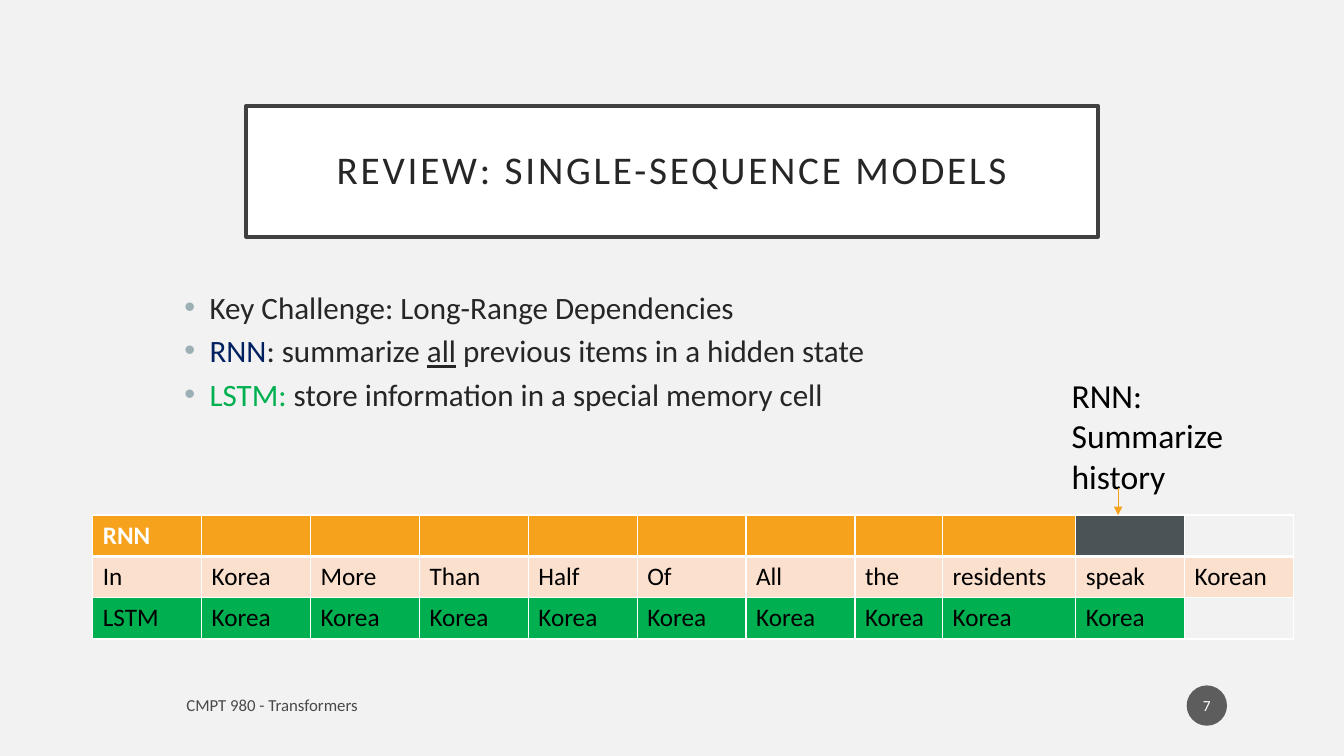
from pptx import Presentation
from pptx.dml.color import RGBColor
from pptx.enum import shapes, text
from pptx.oxml import parse_xml
from pptx.oxml.ns import nsdecls, qn
from pptx.util import Inches, Pt

COLORS = {
    "page": "F2F2F2", "white": "FFFFFF", "black": "000000", "frame": "404040",
    "body": "262626", "bullet": "9BAFB5", "navy": "002060", "green": "00B050",
    "orange": "F6A21D", "slate": "4A5356", "peach": "FBE0CD",
    "footer": "494949", "badge": "5D5D5D",
}


def rgb(name):
    return RGBColor.from_string(COLORS[name])


def write(para, words, size=18, color="black", bold=False, underline=False, spacing=None):
    span = para.add_run()
    span.text = words
    font = span.font
    font.name, font.size, font.bold, font.underline = "Calibri", Pt(size), bold, underline
    font.color.rgb = rgb(color)
    if spacing:
        span._r.get_or_add_rPr().set("spc", str(spacing * 100))


deck = Presentation()
deck.slide_width, deck.slide_height = Inches(13.33), Inches(7.5)
page = deck.slides.add_slide(deck.slide_layouts[6])
page.background.fill.solid()
page.background.fill.fore_color.rgb = rgb("page")

# Framed title
title = page.shapes.add_shape(shapes.MSO_SHAPE.RECTANGLE, Inches(2.44), Inches(1.05),
                              Inches(8.45), Inches(1.3))
title.shadow.inherit = False
title.fill.solid()
title.fill.fore_color.rgb = rgb("white")
title.line.color.rgb = rgb("frame")
title.line.width = Pt(2.5)
title.text_frame.vertical_anchor = text.MSO_ANCHOR.MIDDLE
para = title.text_frame.paragraphs[0]
para.alignment = text.PP_ALIGN.CENTER
para.line_spacing = 0.9
write(para, "REVIEW: SINGLE-SEQUENCE MODELS", size=28, color="body", spacing=2)

# Bullets
bullets = [
    [("Key Challenge: Long-Range Dependencies", {})],
    [("RNN", {"color": "navy"}), (": summarize ", {}), ("all", {"underline": True}),
     (" previous items in a hidden state", {})],
    [("LSTM:", {"color": "green"}), (" store information in a special memory cell", {})],
]
body = page.shapes.add_textbox(Inches(1.73), Inches(2.88), Inches(10.04), Inches(1.3))
body.text_frame.word_wrap = True
for i, bullet in enumerate(bullets):
    para = body.text_frame.add_paragraph() if i else body.text_frame.paragraphs[0]
    para.line_spacing = 0.8
    para.space_before = Pt(10)
    props = para._p.get_or_add_pPr()
    props.set("marL", str(Inches(0.25)))
    props.set("indent", str(-Inches(0.25)))
    props.append(parse_xml(f'<a:buClr {nsdecls("a")}><a:srgbClr val="{COLORS["bullet"]}"/></a:buClr>'))
    props.append(parse_xml(f'<a:buFont {nsdecls("a")} typeface="Arial"/>'))
    props.append(parse_xml(f'<a:buChar {nsdecls("a")} char="•"/>'))
    for words, style in bullet:
        write(para, words, **{"size": 22.2, "color": "body", **style})

# Sequence table: words, fills and text colour of each row
rows = [
    (["RNN"] + [""] * 10, ["orange"] * 9 + ["slate", None], "white"),
    ("In Korea More Than Half Of All the residents speak Korean".split(),
     ["peach"] * 11, "black"),
    (["LSTM"] + ["Korea"] * 9 + [""], ["green"] * 10 + [None], "black"),
]
widths = [1.08] * 7 + [0.87, 1.32] + [1.08] * 2
table = page.shapes.add_table(3, 11, Inches(0.92), Inches(5.11),
                              Inches(sum(widths)), Inches(1.22)).table
for column, width in zip(table.columns, widths):
    column.width = Inches(width)
for r, (row_words, fills, color) in enumerate(rows):
    table.rows[r].height = Inches(0.41)
    for c, (words, fill) in enumerate(zip(row_words, fills)):
        cell = table.cell(r, c)
        if words:
            write(cell.text_frame.paragraphs[0], words, color=color, bold=r == 0)
        props = cell._tc.get_or_add_tcPr()
        for side in "LRTB":
            heavy = (r, side) in ((0, "B"), (1, "T"))
            props.append(parse_xml(
                f'<a:ln{side} {nsdecls("a")} w="{Pt(3 if heavy else 1)}"><a:solidFill>'
                f'<a:srgbClr val="{COLORS["white"]}"/></a:solidFill></a:ln{side}>'))
        if fill:
            cell.fill.solid()
            cell.fill.fore_color.rgb = rgb(fill)
        else:
            cell.fill.background()

# Footer and page number
footer = page.shapes.add_textbox(Inches(1.75), Inches(6.82), Inches(6.45), Inches(0.35))
footer.text_frame.word_wrap = True
footer.text_frame.vertical_anchor = text.MSO_ANCHOR.MIDDLE
write(footer.text_frame.paragraphs[0], "CMPT 980 - Transformers", size=12, color="footer")

badge = page.shapes.add_shape(shapes.MSO_SHAPE.OVAL, Inches(11.77), Inches(6.8),
                              Inches(0.4), Inches(0.4))
badge.shadow.inherit = False
badge.fill.solid()
badge.fill.fore_color.rgb = rgb("badge")
badge.line.fill.background()
badge.text_frame.margin_left = badge.text_frame.margin_right = Inches(0.02)
badge.text_frame.vertical_anchor = text.MSO_ANCHOR.MIDDLE
badge.text_frame.paragraphs[0].alignment = text.PP_ALIGN.CENTER
write(badge.text_frame.paragraphs[0], "7", size=11, color="white")

# Note with an arrow to the dark cell
note = page.shapes.add_textbox(Inches(10.53), Inches(3.67), Inches(1.83), Inches(1.31))
note.text_frame.word_wrap = True
write(note.text_frame.paragraphs[0], "RNN: Summarize history", size=24)

arrow = page.shapes.add_connector(shapes.MSO_CONNECTOR.STRAIGHT, Inches(11.09), Inches(4.84),
                                  Inches(11.09), Inches(5.11))
arrow.line.color.rgb = rgb("orange")
arrow.line.width = Pt(0.5)
arrow.line._get_or_add_ln().append(parse_xml(f'<a:tailEnd {nsdecls("a")} type="triangle"/>'))
arrow._element.find(qn("p:spPr")).append(parse_xml(f'<a:effectLst {nsdecls("a")}/>'))

deck.save("out.pptx")
